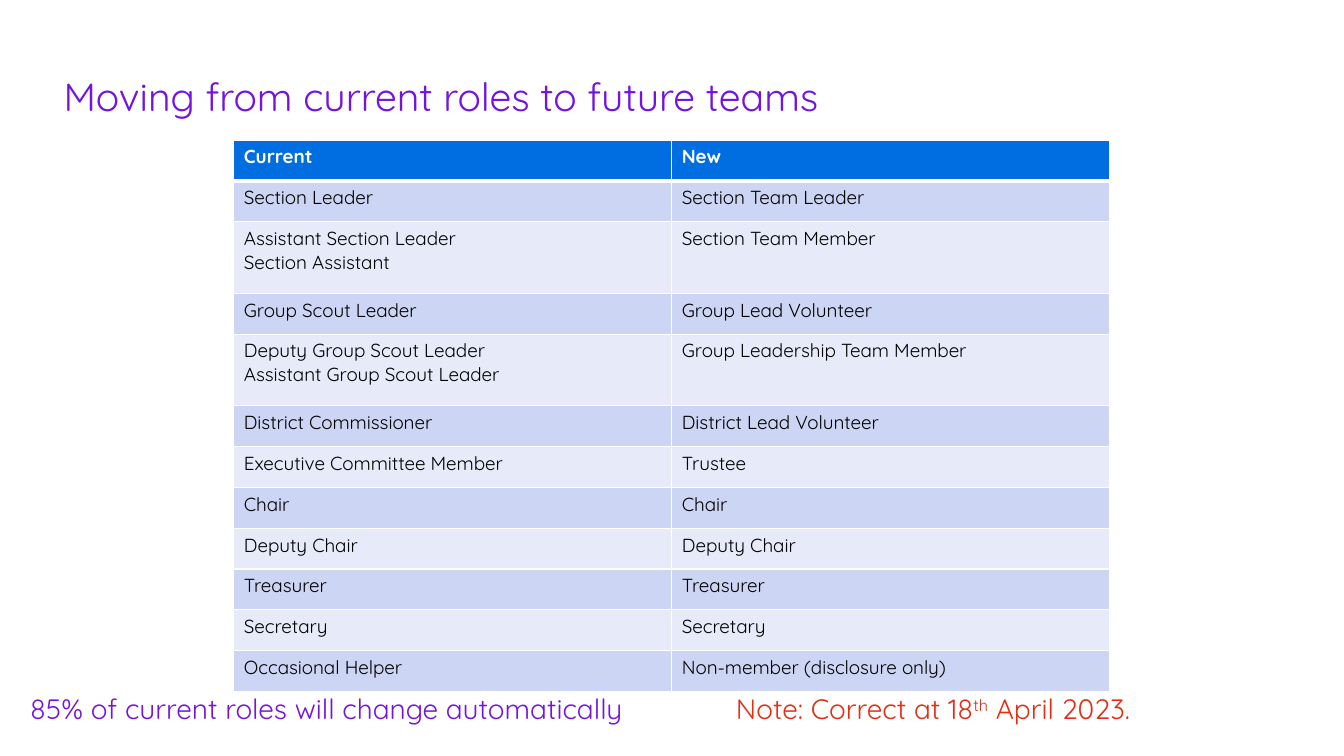
from dataclasses import dataclass

from lxml.etree import SubElement
from pptx import Presentation
from pptx.dml.color import RGBColor
from pptx.enum.text import MSO_ANCHOR as Anchor, MSO_AUTO_SIZE as AutoSize, PP_ALIGN as Align
from pptx.oxml.ns import qn
from pptx.util import Inches, Pt


@dataclass(frozen=True)
class Theme:
    """Colours, type sizes and line widths of the slide."""
    font: str = "Quicksand"
    purple: str = "7414DC"
    red: str = "E22E12"
    blue: str = "006EE0"
    bands: tuple = ("CCD5F3", "E7EBF9")
    white: str = "FFFFFF"
    black: str = "000000"
    title_size: float = 28
    note_size: float = 20
    cell_size: float = 13.5
    rule: float = 1
    header_rule: float = 3


THEME = Theme()
WIDTH, HEIGHT = Inches(13.33), Inches(7.5)
TALL_ROW_SHARE = 0.13

ROLES = [
    ("Current", "New"),
    ("Section Leader", "Section Team Leader"),
    ("Assistant Section Leader\nSection Assistant", "Section Team Member"),
    ("Group Scout Leader", "Group Lead Volunteer"),
    ("Deputy Group Scout Leader\nAssistant Group Scout Leader", "Group Leadership Team Member"),
    ("District Commissioner", "District Lead Volunteer"),
    ("Executive Committee Member", "Trustee"),
    ("Chair", "Chair"),
    ("Deputy Chair", "Deputy Chair"),
    ("Treasurer", "Treasurer"),
    ("Secretary", "Secretary"),
    ("Occasional Helper", "Non-member (disclosure only)"),
]


def place(left, top, width, height):
    """Turn percentages of the slide into a box."""
    return (int(WIDTH * left / 100), int(HEIGHT * top / 100),
            int(WIDTH * width / 100), int(HEIGHT * height / 100))


def paint(part, color):
    """Give a shape or cell a solid fill."""
    part.fill.solid()
    part.fill.fore_color.rgb = RGBColor.from_string(color)


def write(paragraph, text, size, color, bold=False, raised=False):
    """Append one formatted run to a paragraph."""
    run = paragraph.add_run()
    run.text = text
    font = run.font
    font.name, font.size, font.bold = THEME.font, Pt(size), bold
    font.color.rgb = RGBColor.from_string(color)
    if raised:
        run._r.get_or_add_rPr().set("baseline", "30000")


def rule_cell(cell, top, bottom):
    """Draw white borders around a table cell."""
    props = cell._tc.get_or_add_tcPr()
    for side, weight in zip("LRTB", (THEME.rule, THEME.rule, top, bottom)):
        line = SubElement(props, qn(f"a:ln{side}"), w=str(Pt(weight)))
        SubElement(SubElement(line, qn("a:solidFill")), qn("a:srgbClr"), val=THEME.white)


def add_title(slide, box):
    """Place the slide title in its box."""
    title = slide.shapes.title
    title.left, title.top, title.width, title.height = box
    paint(title, THEME.white)
    frame = title.text_frame
    frame.auto_size, frame.word_wrap = AutoSize.NONE, True
    frame.vertical_anchor = Anchor.MIDDLE
    frame.margin_left = Inches(0.55)
    frame.margin_right = Inches(0.07)
    frame.margin_top = frame.margin_bottom = Inches(0.04)
    heading = frame.paragraphs[0]
    heading.alignment = Align.LEFT
    write(heading, "Moving from current roles to future teams", THEME.title_size, THEME.purple)


def add_roles(slide, box):
    """Fill the box with the table of current and new roles."""
    left, top, width, height = box
    roles = slide.shapes.add_table(len(ROLES), len(ROLES[0]), *box).table
    for column in roles.columns:
        column.width = width // len(ROLES[0])
    tall = [any("\n" in role for role in pair) for pair in ROLES]
    single_share = (1 - TALL_ROW_SHARE * sum(tall)) / tall.count(False)
    for index, pair in enumerate(ROLES):
        header = index == 0
        roles.rows[index].height = int(height * (TALL_ROW_SHARE if tall[index] else single_share))
        for cell, role in zip(roles.rows[index].cells, pair):
            rule_cell(cell, THEME.header_rule if index == 1 else THEME.rule,
                      THEME.header_rule if header else THEME.rule)
            paint(cell, THEME.blue if header else THEME.bands[(index - 1) % 2])
            frame = cell.text_frame
            for number, line in enumerate(role.split("\n")):
                paragraph = frame.add_paragraph() if number else frame.paragraphs[0]
                write(paragraph, line, THEME.cell_size,
                      THEME.white if header else THEME.black, bold=header)


def add_notes_line(slide, box):
    """Write the closing line, with the date note at a tab stop."""
    frame = slide.shapes.add_textbox(*box).text_frame
    frame.word_wrap = True
    frame.margin_left = Inches(0.01)
    frame.margin_right = frame.margin_top = frame.margin_bottom = 0
    closing = frame.paragraphs[0]
    stops = SubElement(closing._p.get_or_add_pPr(), qn("a:tabLst"))
    SubElement(stops, qn("a:tab"), pos=str(Inches(7)), algn="l")
    write(closing, "85% of current roles will change automatically\t", THEME.note_size, THEME.purple)
    for text, raised in (("Note: Correct at 18", False), ("th", True), (" April 2023.", False)):
        write(closing, text, THEME.note_size, THEME.red, raised=raised)


def main():
    """Build and save the slide."""
    deck = Presentation()
    deck.slide_width, deck.slide_height = WIDTH, HEIGHT
    slide = deck.slides.add_slide(deck.slide_layouts[5])
    add_roles(slide, place(17.4, 18.53, 65.18, 72.96))
    add_notes_line(slide, place(2.17, 91.47, 97.83, 5.47))
    add_title(slide, place(0.6, 9.07, 77.78, 7.33))
    deck.save("out.pptx")


if __name__ == "__main__":
    main()
